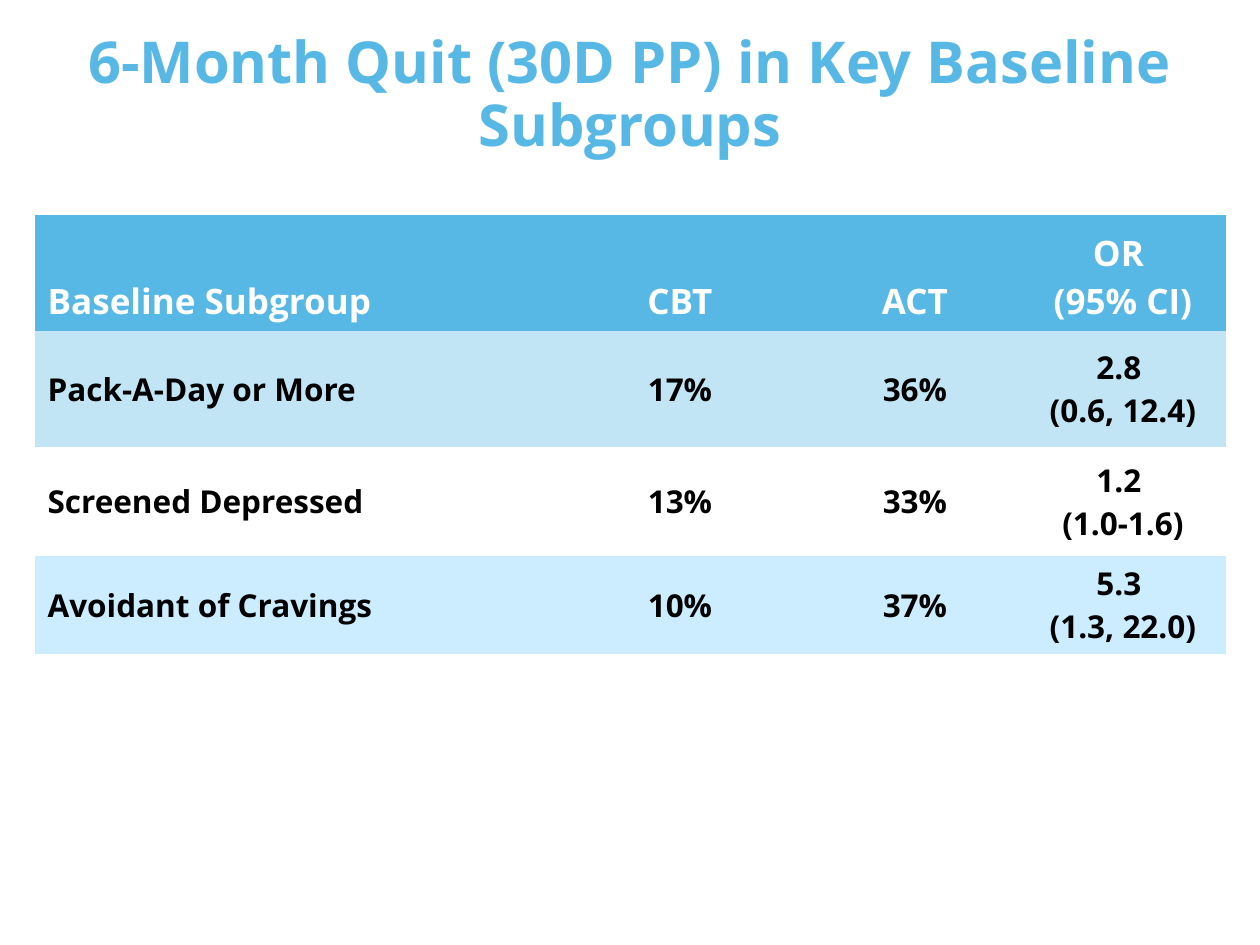
"""Build a slide tabulating six-month quit rates in key baseline subgroups."""
from pptx import Presentation
from pptx import util as u
from pptx.dml.color import RGBColor
from pptx.enum import text

PX = u.Inches(1) // 126
THEME = {
    "font": "Open Sans", "accent": "57B8E5", "white": "FFFFFF", "ink": "000000",
    "bands": ["57B8E5", "C1E5F5", "FFFFFF", "CCECFF"],
    "title_size": 33, "header_size": 20, "body_size": 18,
}
ROWS = [
    ["Baseline Subgroup", "CBT", "ACT", "OR \n(95% CI)"],
    ["Pack-A-Day or More", "17%", "36%", "2.8 \n(0.6, 12.4)"],
    ["Screened Depressed", "13%", "33%", "1.2 \n(1.0-1.6)"],
    ["Avoidant of Cravings", "10%", "37%", "5.3 \n(1.3, 22.0)"],
]
COLUMN_WIDTHS = [515, 260, 210, 206]
ROW_HEIGHTS = [116, 116, 109, 98]


def write(frame, wording, size, color, align):
    frame.text = wording
    for para in frame.paragraphs:
        para.alignment = align
        for span in para.runs:
            style = {"name": THEME["font"], "size": u.Pt(size), "bold": True}
            for name, value in style.items():
                setattr(span.font, name, value)
            span.font.color.rgb = RGBColor.from_string(color)


deck = Presentation()
deck.slide_width, deck.slide_height = 1260 * PX, 945 * PX
page = deck.slides.add_slide(deck.slide_layouts[5])

title = page.shapes.title
place = {"left": 0, "top": 13, "width": 1260, "height": 152}
for name, value in place.items():
    setattr(title, name, value * PX)
frame = title.text_frame
write(frame, "6-Month Quit (30D PP) in Key Baseline Subgroups",
      THEME["title_size"], THEME["accent"], text.PP_ALIGN.CENTER)
settings = {"word_wrap": True, "auto_size": text.MSO_AUTO_SIZE.NONE,
            "vertical_anchor": text.MSO_ANCHOR.BOTTOM}
for name, value in settings.items():
    setattr(frame, name, value)
frame.paragraphs[0].line_spacing = 0.9

table = page.shapes.add_table(
    len(ROWS), len(COLUMN_WIDTHS), 35 * PX, 215 * PX,
    sum(COLUMN_WIDTHS) * PX, sum(ROW_HEIGHTS) * PX).table
table.horz_banding = False
for column, width in zip(table.columns, COLUMN_WIDTHS):
    column.width = width * PX
for r, (row, height, band) in enumerate(zip(table.rows, ROW_HEIGHTS, THEME["bands"])):
    row.height = height * PX
    header = r == 0
    size = THEME["header_size" if header else "body_size"]
    color = THEME["white" if header else "ink"]
    for c, cell in enumerate(row.cells):
        cell.fill.solid()
        cell.fill.fore_color.rgb = RGBColor.from_string(band)
        cell.vertical_anchor = text.MSO_ANCHOR.BOTTOM if header else text.MSO_ANCHOR.MIDDLE
        align = text.PP_ALIGN.CENTER if c else text.PP_ALIGN.LEFT
        write(cell.text_frame, ROWS[r][c], size, color, align)

# The table style draws white rules between cells; a plain grid has none.
style_id = table._tbl.tblPr.find("{*}tableStyleId")
style_id.text = "{2D5ABB26-0587-4C30-8999-92F81FD0307C}"
heading = table.cell(0, 0).text_frame.paragraphs[0]
heading.line_spacing, heading.space_after = 1.1, u.Pt(28)

deck.save("out.pptx")
